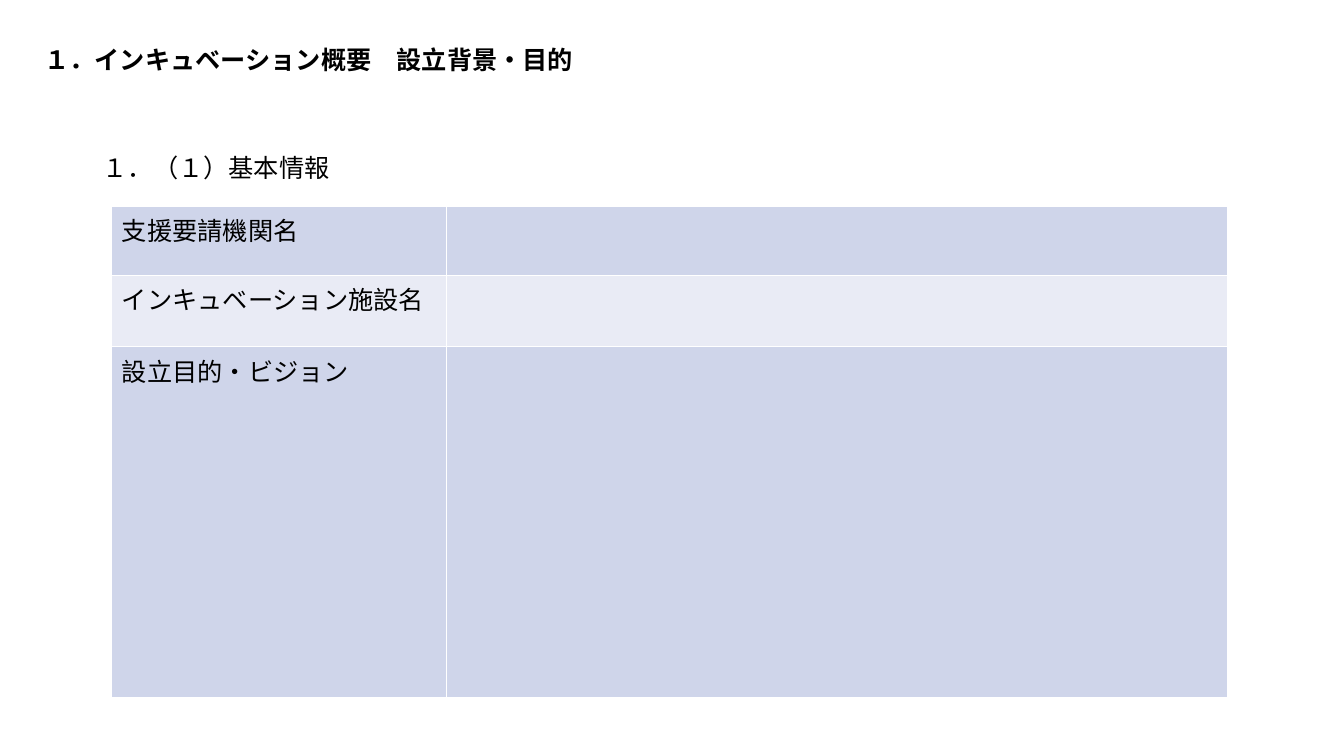
import pptx
import pptx.dml.color
import pptx.enum.text
import pptx.oxml
import pptx.oxml.ns
import pptx.util
from dataclasses import dataclass

Inches = pptx.util.Inches

TITLE = "１．インキュベーション概要　設立背景・目的"
TITLE_BOX = (0.34, 0.39, 5.5, 0.4)
SUBTITLE = "１．（１）基本情報"
SUBTITLE_BOX = (0.92, 1.46, 2.47, 0.4)
ROWS = [
    ("支援要請機関名", 0.68),
    ("インキュベーション施設名", 0.71),
    ("設立目的・ビジョン", 3.48),
]
COLUMN_WIDTHS = (3.32, 7.75)
TABLE_ORIGIN = (1.11, 2.05)


@dataclass(frozen=True)
class Theme:
    title_font: str = "Arial"
    body_font: str = "Noto Sans CJK JP"
    size: int = 18
    text: str = "000000"
    border: str = "FFFFFF"
    border_width: int = 1
    bands: tuple = ("CFD5EA", "E9EBF5")


THEME = Theme()


def write_text(frame, text, font=THEME.body_font, size=THEME.size, bold=False):
    paragraph = frame.paragraphs[0]
    paragraph.alignment = pptx.enum.text.PP_ALIGN.LEFT
    run = paragraph.add_run()
    run.text = text
    run.font.size = pptx.util.Pt(size)
    run.font.bold = bold
    run.font.color.rgb = pptx.dml.color.RGBColor.from_string(THEME.text)
    run.font.name = font
    latin = run.font._element.find(pptx.oxml.ns.qn("a:latin"))
    latin.addnext(pptx.oxml.parse_xml(
        f'<a:ea {pptx.oxml.ns.nsdecls("a")} typeface="{font}"/>'))


def place_line(shape, box, text, **text_format):
    shape.left, shape.top, shape.width, shape.height = map(Inches, box)
    frame = shape.text_frame
    frame.word_wrap = False
    frame.auto_size = pptx.enum.text.MSO_AUTO_SIZE.SHAPE_TO_FIT_TEXT
    frame.vertical_anchor = pptx.enum.text.MSO_ANCHOR.TOP
    write_text(frame, text, **text_format)


def style_cell(cell, color):
    cell.fill.solid()
    cell.fill.fore_color.rgb = pptx.dml.color.RGBColor.from_string(color)
    properties = cell._tc.get_or_add_tcPr()
    width = pptx.util.Pt(THEME.border_width)
    for index, side in enumerate(("lnL", "lnR", "lnT", "lnB")):
        properties.insert(index, pptx.oxml.parse_xml(
            f'<a:{side} {pptx.oxml.ns.nsdecls("a")} w="{width}"><a:solidFill>'
            f'<a:srgbClr val="{THEME.border}"/></a:solidFill></a:{side}>'))


def add_information_table(slide):
    height = sum(row_height for _, row_height in ROWS)
    box = (*TABLE_ORIGIN, sum(COLUMN_WIDTHS), height)
    table = slide.shapes.add_table(
        len(ROWS), len(COLUMN_WIDTHS), *map(Inches, box)).table
    table.first_row = False
    for column, width in zip(table.columns, COLUMN_WIDTHS):
        column.width = Inches(width)
    for index, (label, row_height) in enumerate(ROWS):
        row = table.rows[index]
        row.height = Inches(row_height)
        for cell in row.cells:
            style_cell(cell, THEME.bands[index % len(THEME.bands)])
        write_text(row.cells[0].text_frame, label)


def main():
    presentation = pptx.Presentation()
    presentation.slide_width = Inches(13.33)
    presentation.slide_height = Inches(7.5)
    slide = presentation.slides.add_slide(
        presentation.slide_layouts.get_by_name("Title Only"))
    place_line(slide.shapes.title, TITLE_BOX, TITLE,
               font=THEME.title_font, bold=True)
    subtitle = slide.shapes.add_textbox(*map(Inches, SUBTITLE_BOX))
    place_line(subtitle, SUBTITLE_BOX, SUBTITLE)
    add_information_table(slide)
    presentation.save("out.pptx")


if __name__ == "__main__":
    main()
